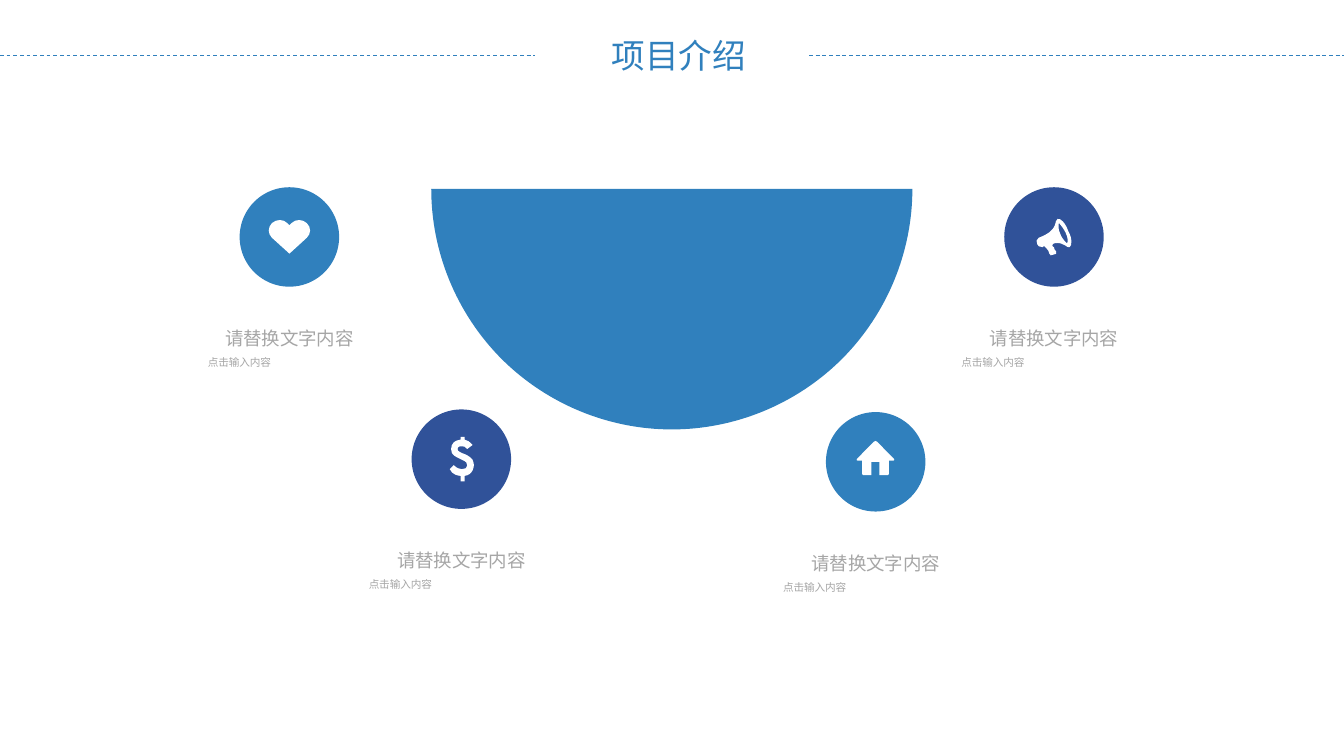
from lxml import etree
from pptx import Presentation
from pptx.dml.color import RGBColor
from pptx.enum import dml, shapes, text
from pptx.oxml import ns
from pptx.util import Cm, Pt

FONT = "Noto Sans CJK SC"
BLUE, NAVY, GRAY, WHITE = "3080BD", "305299", "A6A6A6", "FFFFFF"
SLIDE_WIDTH, SLIDE_HEIGHT = 25.4, 14.29
DISC = 1.88
UNITS_PER_CM = 100 / 2.54

HALF_DISC = """M 179 179 C 225 179 271 161 305.6 126.6 C 340 92 358 46 358 0 L 0 0
C 0 46 18 92 52.4 126.6 C 87 161 133 179 179 179 Z"""
HEART = """M 28.3 2.3 C 25 -0.8 20 -0.8 17 2.3 L 15.4 3.9 L 13.8 2.3
C 10.8 -0.8 5.8 -0.8 2.4 2.3 C -0.8 5.5 -0.8 10.2 2.4 13.2 L 15.4 25
L 28.3 13.2 C 31.6 10.2 31.6 5.5 28.3 2.3 Z"""
HOUSE = """M 27.8 13.6 L 15.2 0.8 C 14.4 0 13.6 0 12.8 0.8 L 0.2 13.6
C -0.3 14.2 0 14.9 0.7 14.9 L 4 14.9 L 4 24 C 4 25 4.4 25.7 5 25.7
L 11 25.7 L 11 15.8 L 17 15.8 L 17 25.7 L 23 25.7 C 23.8 25.7 24 25 24 24
L 24 14.9 L 27.3 14.9 C 28 14.9 28.3 14.2 27.8 13.6 Z"""
DOLLAR = """M 17 6 L 13 9 C 12 7 10 7 9 7 C 8 7 7 7 6.4 7.5 C 6 8 5.8 8.5 5.8 9
C 5.8 9.5 6 10 6.3 10.4 C 7 11 8 11.5 9 12 C 12 13 14 14 15 15
C 16 16 16.5 16.5 17 17 C 17.5 18.5 18 20 18 21 C 18 22 17.5 23.5 17 25
C 16.5 26 15.5 27 15 27.5 C 14 28.3 12.5 28.8 11 29 L 11 33 L 8 33 L 8 29
C 6 28.8 5 28.5 4 28 C 2 27 1 26 0 24 L 3 21 C 5 23 7 24 9 24
C 10 24 11 24 12 23.3 C 12.5 23 13 22 13 21.3 C 13 20.5 13 19.5 12.3 19
C 12 18.3 11 18 9 17 C 7 16 5 15 4 14.4 C 3 13.5 2 13 1.6 12
C 1.2 11 1 10 1 9 C 1 7 1.7 5.3 3 4 C 4 3 6 2.2 8 2 L 8 0 L 11 0 L 11 2
C 12 2.5 13 2.8 14 3.2 C 15 3.8 16 5 17 6 Z"""
MEGAPHONE = """M 23 18 C 23 18 20 16 18 11 C 16 7 17 3 17 3 C 17 3 20 6 22 10
C 24 14 24 18 23 18 Z
M 24 9 C 22 3 18 -1 16 0 C 13 1 18 8 2 14 C 0 15 0 17 1 19
C 1 20 3 21 5 21 C 5 21 6 20 6 20 C 7 22 8 21 8 22 C 9 23 10 25 10 26
C 10 27 11 27 11 27 C 12 27 14 26 15 26 C 15 26 15 25 15 24
C 15 24 14 24 14 23 C 14 22 13 20 12 20 C 12 19 13 18 14 18
C 21 17 23 22 25 21 C 27 20 27 14 24 9 Z"""

ITEMS = [
    {"at": (4.53, 3.54), "color": BLUE, "icon": HEART, "icon_at": (0.55, 0.62), "caption_x": -0.6},
    {"at": (18.98, 3.54), "color": NAVY, "icon": MEGAPHONE, "icon_at": (0.6, 0.6), "caption_x": -0.81},
    {"at": (7.78, 7.74), "color": NAVY, "icon": DOLLAR, "icon_at": (0.72, 0.52), "caption_x": -0.81},
    {"at": (15.61, 7.79), "color": BLUE, "icon": HOUSE, "icon_at": (0.58, 0.54), "caption_x": -0.81},
]


def rgb(value):
    return RGBColor.from_string(value)


def set_all(target, values):
    for name, value in values.items():
        setattr(target, name, value)


def paint(shape, color):
    shape.shadow.inherit = False
    shape.fill.solid()
    shape.fill.fore_color.rgb = rgb(color)
    shape.line.fill.background()


def read_contour(contour, left, top):
    segments = []
    tokens = iter(contour.split())
    for command in tokens:
        segments.append([
            (Cm(left + float(next(tokens)) / UNITS_PER_CM), Cm(top + float(next(tokens)) / UNITS_PER_CM))
            for _ in range(3 if command == "C" else 1)
        ])
    return segments


def curve_middle(start, curve):
    return tuple((a + 3 * b + 3 * c + d) / 8 for a, b, c, d in zip(start, *curve))


def bend_curves(shape, segments):
    lines = iter(list(shape._element.iter(ns.qn("a:lnTo"))))
    for segment in segments:
        line = next(lines)
        if len(segment) == 3:
            path_element = line.getparent()
            path_element.remove(next(lines))
            curve = etree.Element(ns.qn("a:cubicBezTo"))
            for x, y in segment:
                etree.SubElement(curve, ns.qn("a:pt"), x=str(x - shape.left), y=str(y - shape.top))
            path_element.replace(line, curve)


def add_outline(slide, outline, left, top, color):
    contours = [read_contour(contour, left, top) for contour in outline.split("Z")[:-1]]
    builder = slide.shapes.build_freeform(*contours[0][0][0], scale=1.0)
    for index, contour in enumerate(contours):
        if index:
            builder.move_to(*contour[0][0])
        vertices = []
        for previous, segment in zip(contour, contour[1:]):
            if len(segment) == 3:
                vertices.append(curve_middle(previous[-1], segment))
            vertices.append(segment[-1])
        builder.add_line_segments(vertices, close=True)
    shape = builder.convert_to_shape()
    bend_curves(shape, [segment for contour in contours for segment in contour[1:]])
    paint(shape, color)


def add_disc(slide, left, top, color):
    disc = slide.shapes.add_shape(shapes.MSO_SHAPE.OVAL, Cm(left), Cm(top), Cm(DISC), Cm(DISC))
    paint(disc, color)


def write_text(shape, words, size, color, frame_format, paragraph_format):
    set_all(shape.text_frame, frame_format)
    paragraph = shape.text_frame.paragraphs[0]
    set_all(paragraph, paragraph_format)
    run = paragraph.add_run()
    run.text = words
    set_all(run.font, {"size": Pt(size), "name": FONT})
    run.font.color.rgb = rgb(color)
    etree.SubElement(run.font._element, ns.qn("a:ea"), typeface=FONT)


def add_label(slide, words, box, size, anchor, alignment):
    label = slide.shapes.add_textbox(*map(Cm, box))
    frame_format = {f"margin_{side}": 0 for side in ("left", "top", "right", "bottom")}
    frame_format.update(
        word_wrap=True, vertical_anchor=anchor, auto_size=text.MSO_AUTO_SIZE.SHAPE_TO_FIT_TEXT
    )
    write_text(label, words, size, GRAY, frame_format, {"alignment": alignment, "line_spacing": 1.2})


def add_title(slide):
    title = slide.shapes.title
    set_all(title, {"left": Cm(11.38), "top": Cm(0.56), "width": Cm(2.95), "height": Cm(0.97)})
    frame_format = {
        "margin_left": Cm(0.18), "margin_right": Cm(0.18),
        "margin_top": Cm(0.1), "margin_bottom": Cm(0.1),
        "word_wrap": False, "vertical_anchor": text.MSO_ANCHOR.TOP,
        "auto_size": text.MSO_AUTO_SIZE.SHAPE_TO_FIT_TEXT,
    }
    write_text(title, "项目介绍", 18, BLUE, frame_format, {"alignment": text.PP_ALIGN.LEFT})


def add_dashed_line(slide, start, end):
    y = Cm(1.04)
    connector = slide.shapes.add_connector(shapes.MSO_CONNECTOR.STRAIGHT, Cm(start), y, Cm(end), y)
    connector.line.color.rgb = rgb(BLUE)
    set_all(connector.line, {"width": Pt(0.5), "dash_style": dml.MSO_LINE.DASH})
    etree.SubElement(connector._element.spPr, ns.qn("a:effectLst"))


def add_item(slide, item):
    left, top = item["at"]
    add_disc(slide, left, top, item["color"])
    icon_x, icon_y = item["icon_at"]
    add_outline(slide, item["icon"], left + icon_x, top + icon_y, WHITE)
    heading_width = 3.07
    heading_box = (left + (DISC - heading_width) / 2, top + 2.55, heading_width, 0.51)
    add_label(slide, "请替换文字内容", heading_box, 9.9, text.MSO_ANCHOR.MIDDLE, text.PP_ALIGN.CENTER)
    caption_box = (left + item["caption_x"], top + 3.14, 3.5, 0.28)
    add_label(slide, "点击输入内容", caption_box, 5.7, text.MSO_ANCHOR.TOP, text.PP_ALIGN.JUSTIFY)


def main():
    presentation = Presentation()
    set_all(presentation, {"slide_width": Cm(SLIDE_WIDTH), "slide_height": Cm(SLIDE_HEIGHT)})
    slide = presentation.slides.add_slide(presentation.slide_layouts[5])
    add_title(slide)
    line_length = 10.11
    add_dashed_line(slide, 0, line_length)
    add_dashed_line(slide, SLIDE_WIDTH - line_length, SLIDE_WIDTH)
    add_outline(slide, HALF_DISC, 8.15, 3.57, BLUE)
    for item in ITEMS:
        add_item(slide, item)
    presentation.save("out.pptx")


if __name__ == "__main__":
    main()
